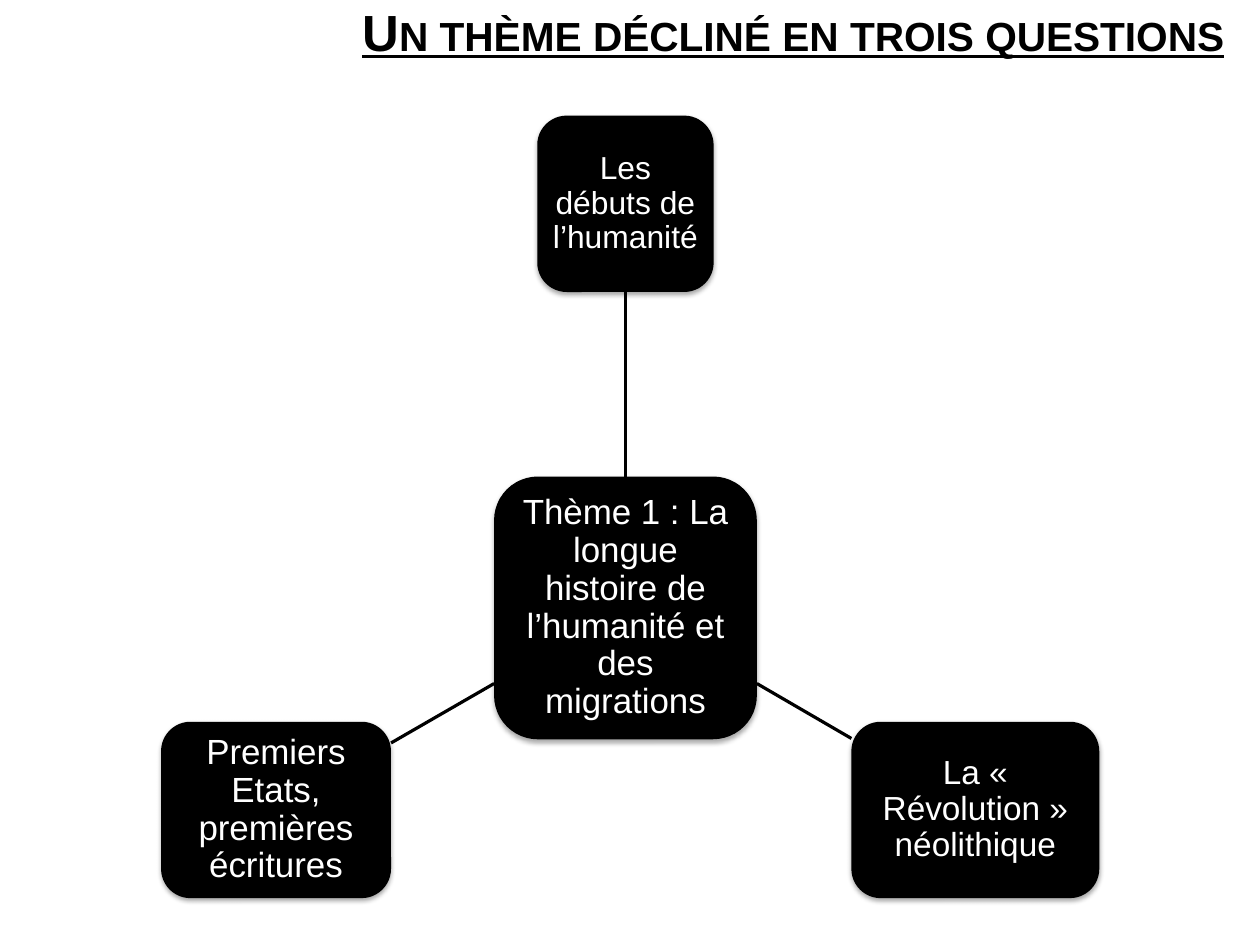
from lxml import etree
from pptx import Presentation
from pptx.dml.color import RGBColor
from pptx.enum.shapes import MSO_CONNECTOR, MSO_SHAPE
from pptx.enum.text import MSO_ANCHOR, MSO_AUTO_SIZE, PP_ALIGN
from pptx.oxml import parse_xml
from pptx.oxml.ns import nsdecls, qn
from pptx.util import Cm, Pt

ROUNDED = MSO_SHAPE.ROUNDED_RECTANGLE
STRAIGHT = MSO_CONNECTOR.STRAIGHT
LEFT, CENTER = PP_ALIGN.LEFT, PP_ALIGN.CENTER
TOP, MIDDLE = MSO_ANCHOR.TOP, MSO_ANCHOR.MIDDLE
GROW = MSO_AUTO_SIZE.SHAPE_TO_FIT_TEXT
TITLE_ONLY = 5
SHADOW = (
    f'<a:outerShdw {nsdecls("a")} blurRad="{Pt(3.1)}" dist="{Pt(1.8)}" '
    'dir="5400000" rotWithShape="0"><a:srgbClr val="000000">'
    '<a:alpha val="35000"/></a:srgbClr></a:outerShdw>'
)


def color(value):
    return RGBColor.from_string(value)


def write(shape, text, size, ink, align=CENTER, anchor=MIDDLE, spacing=0.9,
          bold=False, underline=False, small_caps=False):
    frame = shape.text_frame
    frame.vertical_anchor = anchor
    paragraph = frame.paragraphs[0]
    paragraph.alignment = align
    paragraph.line_spacing = spacing
    run = paragraph.add_run()
    run.text = text
    font = run.font
    font.name = "Arial"
    font.size = Pt(size)
    font.bold = bold
    font.underline = underline
    font.color.rgb = color(ink)
    if small_caps:
        run._r.get_or_add_rPr().set("cap", "small")


class ThemeSlide:
    dark = "000000"
    light = "FFFFFF"
    line_width = 2
    inset = 0.15

    def __init__(self, presentation):
        layout = presentation.slide_layouts[TITLE_ONLY]
        self.slide = presentation.slides.add_slide(layout)

    def title(self, text, left, top, width, height):
        shape = self.slide.shapes.title
        shape.left, shape.top = Cm(left), Cm(top)
        shape.width, shape.height = Cm(width), Cm(height)
        shape.text_frame.word_wrap = False
        shape.text_frame.auto_size = GROW
        write(shape, text, 32, self.dark, align=LEFT, anchor=TOP, spacing=0.93,
              bold=True, underline=True, small_caps=True)

    def box(self, text, size, left, top, width, height):
        shape = self.slide.shapes.add_shape(
            ROUNDED, Cm(left), Cm(top), Cm(width), Cm(height))
        shape.fill.solid()
        shape.fill.fore_color.rgb = color(self.dark)
        shape.line.fill.background()
        shape.shadow.inherit = False
        effects = shape._element.spPr.find(qn("a:effectLst"))
        effects.append(parse_xml(SHADOW))
        frame = shape.text_frame
        frame.word_wrap = True
        frame.margin_left = frame.margin_right = Cm(self.inset)
        frame.margin_top = frame.margin_bottom = Cm(self.inset)
        write(shape, text, size, self.light)
        return shape

    def line(self, start=(0, 0), end=(0, 0)):
        connector = self.slide.shapes.add_connector(
            STRAIGHT, *(Cm(value) for value in (*start, *end)))
        connector.line.color.rgb = color(self.dark)
        connector.line.width = Pt(self.line_width)
        etree.SubElement(connector._element.spPr, qn("a:effectLst"))
        return connector


def main():
    presentation = Presentation()
    presentation.slide_width = Cm(28)
    presentation.slide_height = Cm(21)
    page = ThemeSlide(presentation)

    page.title("Un thème décliné en trois questions", 7.8, 0, 20.2, 1.52)

    theme = page.box("Thème 1 : La longue histoire de l’humanité et des migrations",
                     22, 10.98, 10.59, 5.84, 5.84)
    beginnings = page.box("Les débuts de l’humanité", 20, 11.94, 2.57, 3.92, 3.92)
    page.box("La « Révolution » néolithique", 21, 18.92, 16.04, 5.51, 3.92)
    page.box("Premiers Etats, premières écritures", 22, 3.58, 16.04, 5.11, 3.92)

    upward = page.line()
    upward.begin_connect(theme, 0)
    upward.end_connect(beginnings, 2)
    page.line((16.82, 15.19), (18.92, 16.41))
    page.line((10.98, 15.19), (8.69, 16.51))

    presentation.save("out.pptx")


if __name__ == "__main__":
    main()
